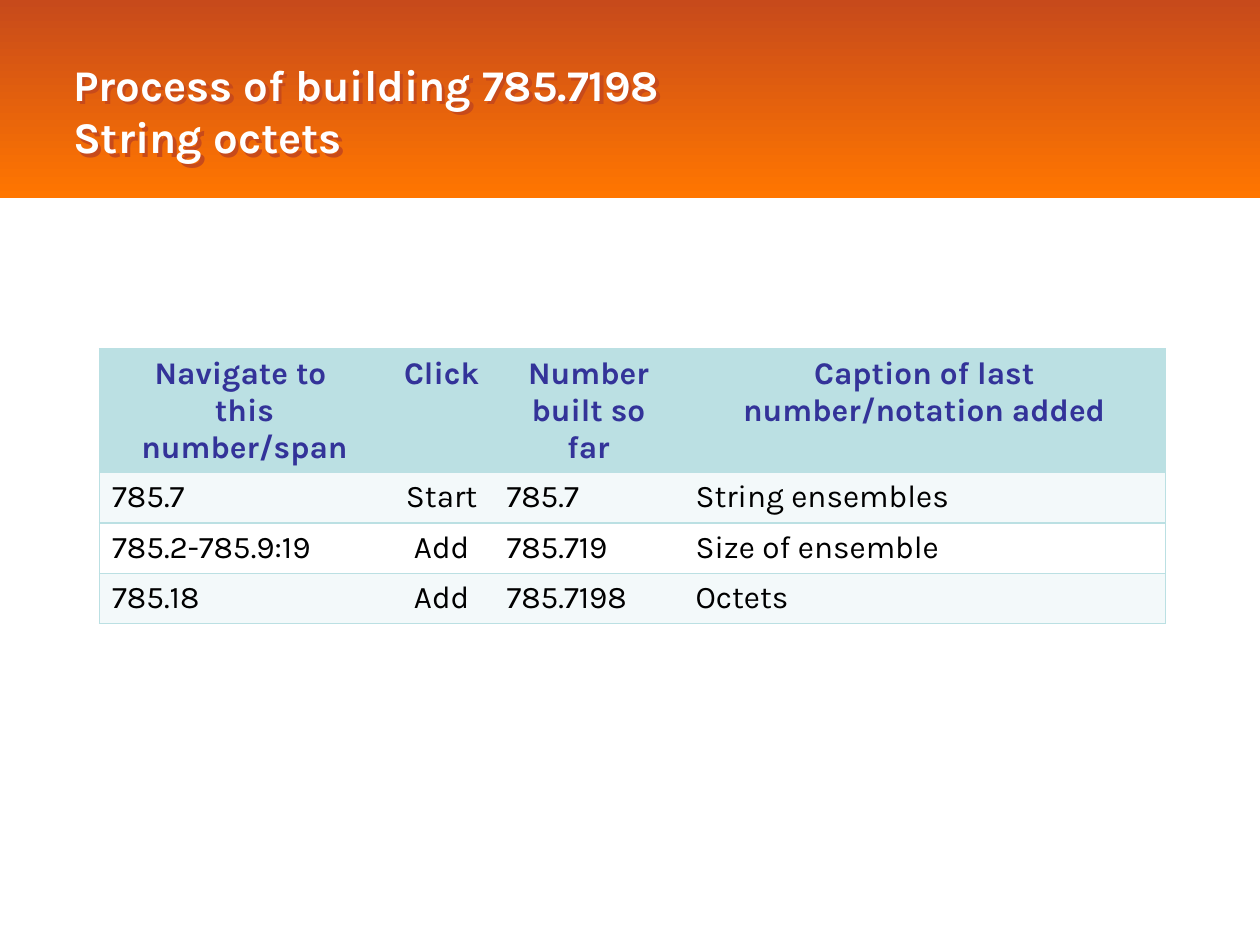
"""Build a slide on making the number for string octets."""
from lxml import etree
from pptx import Presentation, util as u
from pptx.dml.color import RGBColor
from pptx.enum import shapes, text
from pptx.oxml import ns

WHITE = RGBColor(0xFF, 0xFF, 0xFF)
BLACK = RGBColor(0, 0, 0)
RUST = RGBColor(0xC7, 0x4A, 0x1B)
ORANGE = RGBColor(0xFF, 0x76, 0x00)
TEAL = RGBColor(0xBB, 0xE0, 0xE3)
PALE = RGBColor(0xF3, 0xF9, 0xFA)
NAVY = RGBColor(0x33, 0x33, 0x99)

LEFT, MID = text.PP_ALIGN.LEFT, text.PP_ALIGN.CENTER
WIDE, HIGH = 10, 7.5
COLS = (2.3, 0.83, 1.5, 3.83)
ROW = 0.4
ROWS = (
    ("Navigate to \nthis number/span", "Click", "Number built so far",
     "Caption of last number/notation added"),
    ("785.7", "Start", "785.7", "String ensembles"),
    ("785.2-785.9:19", "Add", "785.719", "Size of ensemble"),
    ("785.18", "Add", "785.7198", "Octets"),
)


def write(frame, words, size=18, color=BLACK, bold=False, align=LEFT):
    frame.text = words
    for para in frame.paragraphs:
        para.alignment = align
        for run in para.runs:
            font = run.font
            font.name, font.size, font.bold = "Karla", u.Pt(size), bold
            font.color.rgb = color


def node(root, tag, **attrs):
    item = etree.SubElement(root, ns.qn(tag))
    for name, value in attrs.items():
        item.set(name, str(value))
    return item


class Deck:
    def __init__(self):
        self.prs = Presentation()
        self.prs.slide_width, self.prs.slide_height = u.Inches(WIDE), u.Inches(HIGH)
        self.slide = self.prs.slides.add_slide(self.prs.slide_layouts[5])

    def cols(self, count):
        return int(self.prs.slide_width * count / WIDE)

    def rows(self, count):
        return int(self.prs.slide_height * count / HIGH)

    def box(self, x, y, w, h):
        return self.cols(x), self.rows(y), self.cols(w), self.rows(h)

    def band(self, *place):
        band = self.slide.shapes.add_shape(
            shapes.MSO_SHAPE.RECTANGLE, *self.box(*place))
        band.shadow.inherit = False
        band.line.fill.background()
        band.fill.gradient()
        band.fill.gradient_angle = 270
        for stop, color, spot in zip(band.fill.gradient_stops, (RUST, ORANGE), (0, 1)):
            stop.color.rgb, stop.position = color, spot

    def title(self, words, *place):
        title = self.slide.shapes.title
        title.left, title.top, title.width, title.height = self.box(*place)
        frame = title.text_frame
        frame.word_wrap = True
        frame.auto_size = text.MSO_AUTO_SIZE.NONE
        frame.vertical_anchor = text.MSO_ANCHOR.MIDDLE
        write(frame, words, size=25, color=WHITE, bold=True)
        glow = node(node(title._element.spPr, "a:effectLst"), "a:outerShdw",
                    dist=35921, dir=2700000, algn="ctr", rotWithShape=0)
        node(glow, "a:srgbClr", val=RUST)
        self.slide.shapes._spTree.append(title._element)

    def table(self, rows, x, y):
        place = self.box(x, y, sum(COLS), ROW * len(rows))
        grid = self.slide.shapes.add_table(len(rows), len(COLS), *place).table
        for col, share in zip(grid.columns, COLS):
            col.width = self.cols(share)
        for i, row in enumerate(rows):
            grid.rows[i].height = self.rows(ROW)
            for j, words in enumerate(row):
                self.cell(grid.cell(i, j), words, i, j)

    def cell(self, cell, words, i, j):
        head = i == 0
        write(cell.text_frame, words, color=NAVY if head else BLACK, bold=head,
              align=MID if head or j == 1 else LEFT)
        sides = {"L": j == 0, "R": j == len(COLS) - 1, "T": True, "B": True}
        for side, drawn in sides.items():
            line = node(cell._tc.get_or_add_tcPr(), f"a:ln{side}", w=u.Pt(1))
            if drawn:
                node(node(line, "a:solidFill"), "a:srgbClr", val=TEAL)
            else:
                node(line, "a:noFill")
        cell.fill.solid()
        cell.fill.fore_color.rgb = TEAL if head else PALE if i % 2 else WHITE


def main():
    deck = Deck()
    deck.band(0, 0, WIDE, 1.57)
    deck.title("Process of building 785.7198 \vString octets", 0.48, 0.18, 7.64, 1.39)
    deck.table(ROWS, 0.79, 2.77)
    deck.prs.save("out.pptx")


if __name__ == "__main__":
    main()
